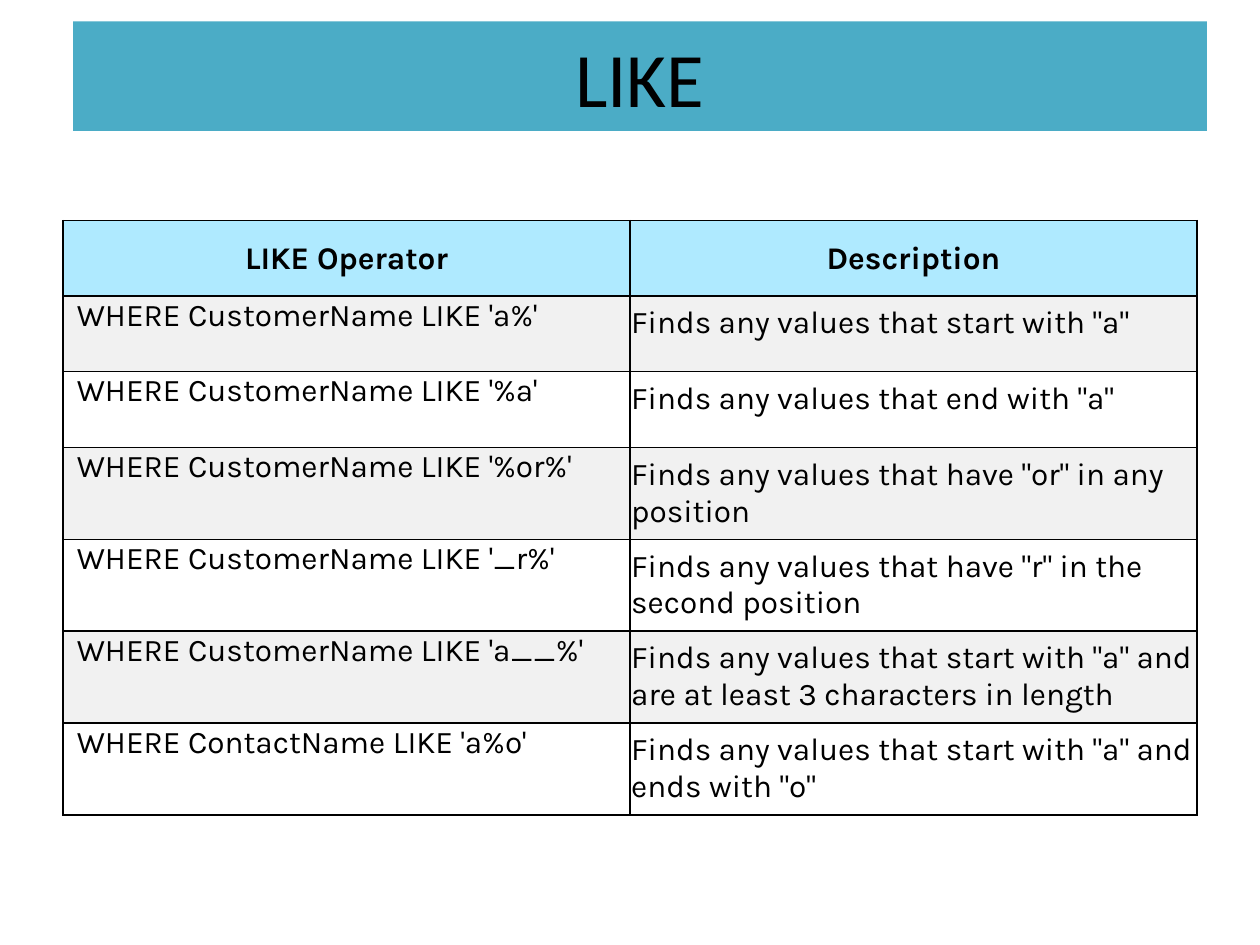
from dataclasses import dataclass

from lxml.etree import SubElement as Sub
from pptx import Presentation
from pptx.dml.color import RGBColor as RGB
from pptx.enum.shapes import MSO_SHAPE as Kind
from pptx.enum.text import MSO_ANCHOR as Anchor, PP_ALIGN as Align
from pptx.oxml.ns import qn
from pptx.slide import Slide
from pptx.table import _Cell as Cell
from pptx.text.text import _Paragraph as Para
from pptx.util import Inches, Pt


@dataclass(frozen=True)
class Theme:
    """Colours, fonts and type sizes."""

    ink: str = "000000"
    bar: str = "4BACC6"
    head: str = "AFEAFF"
    odd: str = "F1F1F1"
    even: str = "FFFFFF"
    title_font: str = "Calibri"
    body_font: str = "Karla"
    title_size: int = 44
    body_size: int = 18
    line: int = 1


@dataclass(frozen=True)
class Look:
    """Insets and placement of text in a cell."""

    left: float
    top: float
    base: float
    align: Align = Align.LEFT
    anchor: Anchor = Anchor.TOP
    bold: bool = False


@dataclass(frozen=True)
class Rule:
    """A LIKE pattern, its meaning and its row height."""

    clause: str
    sense: str
    height: float = 0.6


THEME = Theme()
HEAD = Look(0.01, 0.01, 0, Align.CENTER, Anchor.MIDDLE, True)
CLAUSE = Look(0.11, 0.01, 0)
SENSE = Look(0.01, 0.07, 0.07)
TALL = 0.73
TITLES = Rule("LIKE Operator", "Description")
RULES = [
    Rule("WHERE CustomerName LIKE 'a%'", 'Finds any values that start with "a"'),
    Rule("WHERE CustomerName LIKE '%a'", 'Finds any values that end with "a"'),
    Rule("WHERE CustomerName LIKE '%or%'", 'Finds any values that have "or" in any position', TALL),
    Rule("WHERE CustomerName LIKE '_r%'", 'Finds any values that have "r" in the second position', TALL),
    Rule("WHERE CustomerName LIKE 'a__%'",
         'Finds any values that start with "a" and are at least 3 characters in length', TALL),
    Rule("WHERE ContactName LIKE 'a%o'", 'Finds any values that start with "a" and ends with "o"', TALL),
]


def add_text(para: Para, text: str, font: str, size: int, bold: bool = False) -> None:
    """Add one styled run."""
    run = para.add_run()
    run.text = text
    run.font.name = font
    run.font.size = Pt(size)
    run.font.bold = bold
    run.font.color.rgb = RGB.from_string(THEME.ink)


def add_edges(cell: Cell) -> None:
    """Draw a thin line on all four sides of a cell."""
    props = cell._tc.get_or_add_tcPr()
    for side in ("L", "R", "T", "B"):
        edge = Sub(props, qn(f"a:ln{side}"), w=str(Pt(THEME.line)))
        fill = Sub(edge, qn("a:solidFill"))
        Sub(fill, qn("a:srgbClr"), val=THEME.ink)


def fill_cell(cell: Cell, text: str, look: Look, shade: str) -> None:
    """Set the text, insets, edges and fill of a cell."""
    cell.margin_left, cell.margin_right = Inches(look.left), Inches(0.01)
    cell.margin_top, cell.margin_bottom = Inches(look.top), Inches(look.base)
    cell.vertical_anchor = look.anchor
    para = cell.text_frame.paragraphs[0]
    para.alignment = look.align
    add_text(para, text, THEME.body_font, THEME.body_size, look.bold)
    add_edges(cell)
    cell.fill.solid()
    cell.fill.fore_color.rgb = RGB.from_string(shade)


def add_rules(slide: Slide) -> None:
    """Add the table of LIKE patterns."""
    rows = [TITLES, *RULES]
    high = sum(rule.height for rule in rows)
    table = slide.shapes.add_table(
        len(rows), 2, Inches(0.5), Inches(1.75), Inches(9), Inches(high)
    ).table
    for num, rule in enumerate(rows):
        table.rows[num].height = Inches(rule.height)
        looks = (CLAUSE, SENSE) if num else (HEAD, HEAD)
        band = THEME.odd if num % 2 else THEME.even
        shade = band if num else THEME.head
        for col, text in enumerate((rule.clause, rule.sense)):
            fill_cell(table.cell(num, col), text, looks[col], shade)


def add_title(slide: Slide, text: str) -> None:
    """Add the title bar."""
    bar = slide.shapes.add_shape(
        Kind.RECTANGLE, Inches(0.58), Inches(0.17), Inches(9), Inches(0.87)
    )
    bar.shadow.inherit = False
    bar.fill.solid()
    bar.fill.fore_color.rgb = RGB.from_string(THEME.bar)
    bar.line.fill.background()
    frame = bar.text_frame
    frame.word_wrap = True
    frame.vertical_anchor = Anchor.MIDDLE
    para = frame.paragraphs[0]
    para.alignment = Align.CENTER
    add_text(para, text, THEME.title_font, THEME.title_size)


def main() -> None:
    """Build and save the slide."""
    deck = Presentation()
    deck.slide_width, deck.slide_height = Inches(10), Inches(7.5)
    slide = deck.slides.add_slide(deck.slide_layouts[6])
    add_rules(slide)
    add_title(slide, "LIKE")
    deck.save("out.pptx")


if __name__ == "__main__":
    main()
